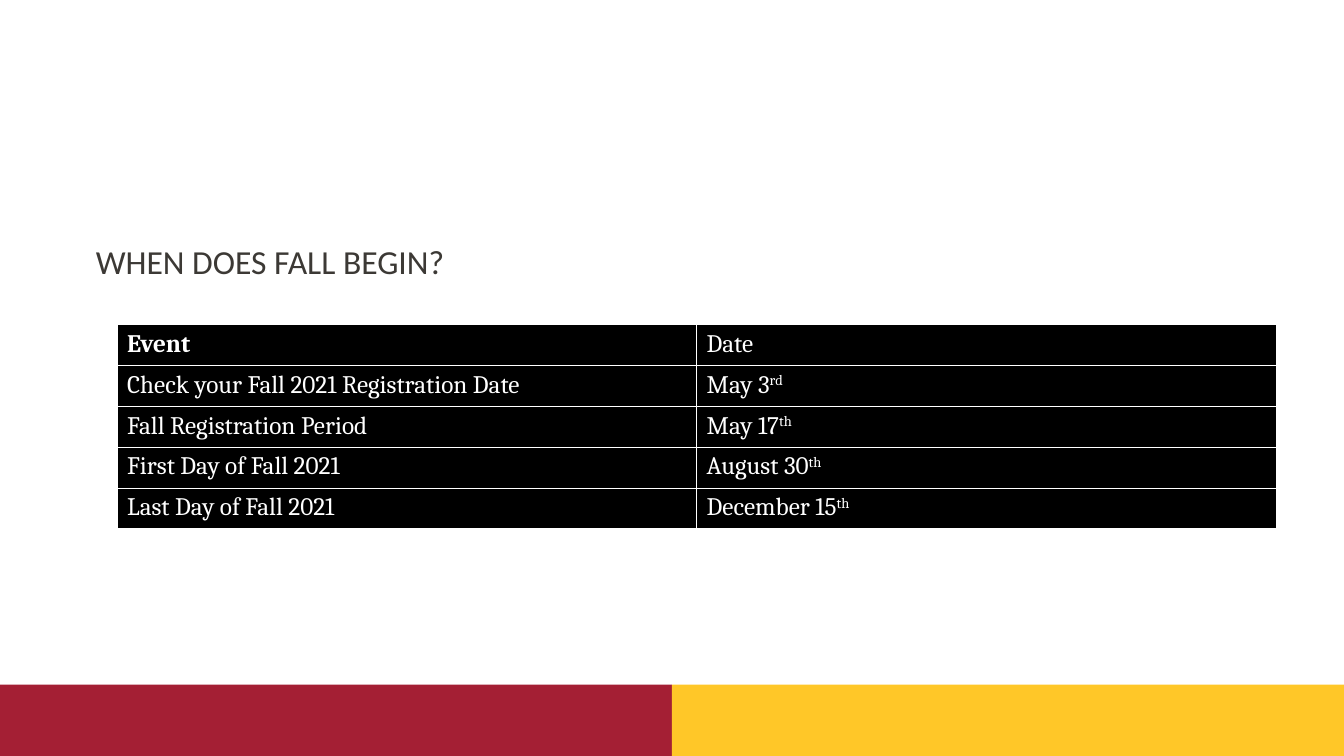
"""Build the slide that lists the key dates of the fall term."""
from dataclasses import dataclass

from lxml.etree import SubElement
from pptx import Presentation
from pptx.dml.color import RGBColor
from pptx.enum.shapes import MSO_SHAPE as SHAPE
from pptx.enum.text import MSO_ANCHOR as ANCHOR, MSO_AUTO_SIZE as AUTO, PP_ALIGN as ALIGN
from pptx.oxml.ns import qn
from pptx.util import Cm, Pt


@dataclass
class Band:
    left: float
    color: str


@dataclass
class Row:
    event: str
    date: str
    suffix: str = ""
    bold: bool = False


WIDTH, HEIGHT = 33.87, 19.05
WHITE, BLACK, GREY = "FFFFFF", "000000", "3C3935"
BANDS = [Band(0, "A41F34"), Band(WIDTH / 2, "FFC728")]
ROWS = [
    Row("Event", "Date", bold=True),
    Row("Check your Fall 2021 Registration Date", "May 3", "rd"),
    Row("Fall Registration Period", "May 17", "th"),
    Row("First Day of Fall 2021", "August 30", "th"),
    Row("Last Day of Fall 2021", "December 15", "th"),
]
TITLE_FONT = {"name": "Calibri", "size": Pt(24), "bold": False}
CELL_FONT = {"name": "Cambria", "size": Pt(18), "bold": False}


def rgb(color: str) -> RGBColor:
    return RGBColor.from_string(color)


def set_all(target, values: dict) -> None:
    for name, value in values.items():
        setattr(target, name, value)


def add_run(p, text: str, font: dict, color: str):
    r = p.add_run()
    r.text = text
    set_all(r.font, font)
    r.font.color.rgb = rgb(color)
    return r


def add_band(s, band: Band) -> None:
    sp = s.shapes.add_shape(SHAPE.RECTANGLE, Cm(band.left), Cm(17.25), Cm(WIDTH / 2), Cm(2))
    sp.shadow.inherit = False
    sp.fill.solid()
    sp.fill.fore_color.rgb = rgb(band.color)
    sp.line.fill.background()


def set_title(s, text: str) -> None:
    sp = s.shapes.title
    set_all(sp, {"left": Cm(2.16), "top": Cm(6.07), "width": Cm(29.72), "height": Cm(1.68)})
    tf = sp.text_frame
    set_all(tf, {"word_wrap": True, "auto_size": AUTO.NONE, "vertical_anchor": ANCHOR.TOP})
    p = tf.paragraphs[0]
    set_all(p, {"alignment": ALIGN.LEFT, "line_spacing": 0.9, "space_before": Pt(0)})
    add_run(p, text, TITLE_FONT, GREY)


def format_cell(cell) -> None:
    tc_pr = cell._tc.get_or_add_tcPr()
    for side in "LRTB":
        ln = SubElement(tc_pr, qn(f"a:ln{side}"), w=str(Pt(1)))
        fill = SubElement(ln, qn("a:solidFill"))
        SubElement(fill, qn("a:srgbClr"), val=WHITE)
    cell.fill.solid()
    cell.fill.fore_color.rgb = rgb(BLACK)


def add_dates(s, rows: list[Row]) -> None:
    row_height = Cm(1.03)
    table = s.shapes.add_table(
        len(rows), 2, Cm(2.95), Cm(8.18), Cm(29.21), row_height * len(rows)
    ).table
    for row, line in zip(rows, table.rows):
        line.height = row_height
        event, date = line.cells
        for cell in (event, date):
            format_cell(cell)
        add_run(event.text_frame.paragraphs[0], row.event, CELL_FONT | {"bold": row.bold}, WHITE)
        p = date.text_frame.paragraphs[0]
        add_run(p, row.date, CELL_FONT, WHITE)
        if row.suffix:
            r = add_run(p, row.suffix, CELL_FONT, WHITE)
            r._r.get_or_add_rPr().set("baseline", "30000")


def main() -> None:
    prs = Presentation()
    set_all(prs, {"slide_width": Cm(WIDTH), "slide_height": Cm(HEIGHT)})
    s = prs.slides.add_slide(prs.slide_layouts[5])
    for band in BANDS:
        add_band(s, band)
    set_title(s, "WHEN DOES FALL BEGIN?")
    add_dates(s, ROWS)
    prs.save("out.pptx")


if __name__ == "__main__":
    main()
